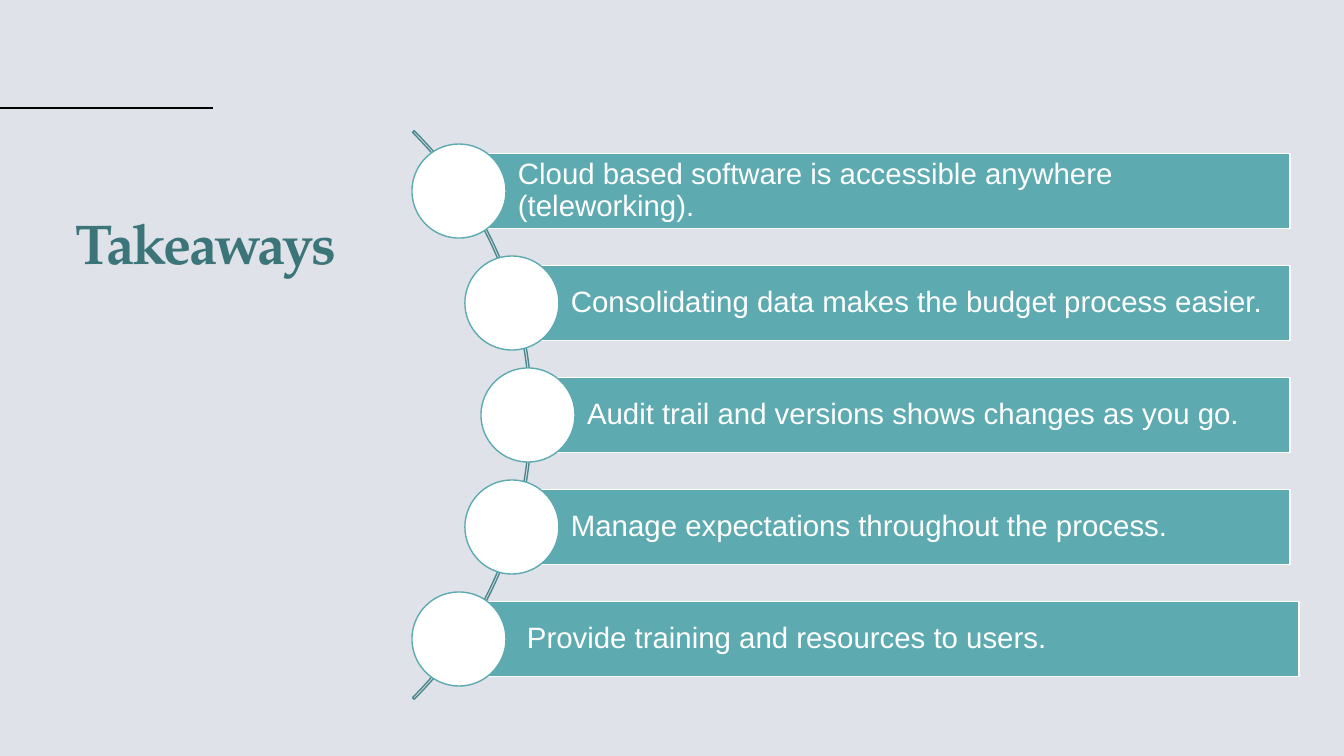
from dataclasses import dataclass
from math import sqrt

from pptx import Presentation
from pptx.dml.color import RGBColor
from pptx.enum.shapes import MSO_CONNECTOR, MSO_SHAPE
from pptx.enum.text import MSO_ANCHOR, PP_ALIGN
from pptx.oxml.ns import qn
from pptx.util import Pt
from lxml.etree import SubElement


@dataclass(frozen=True)
class Theme:
    background: str = "DFE3E9"
    bar: str = "5DAAB0"
    arc: str = "4A888D"
    title: str = "3B7579"
    white: str = "FFFFFF"
    black: str = "000000"
    title_font: str = "TeX Gyre Pagella"
    body_font: str = "Arial"
    title_size: int = 40
    body_size: int = 21


THEME = Theme()
EMU_PER_PX = 914400 / 100.8
TAKEAWAYS = [
    "Cloud based software is accessible anywhere (teleworking).",
    "Consolidating data makes the budget process easier.",
    "Audit trail and versions shows changes as you go.",
    "Manage expectations throughout the process.",
    "Provide training and resources to users.",
]
ARC_CENTER_X, ARC_CENTER_Y, ARC_RADIUS = 130, 415, 402
DISC_ORBIT, DISC_SIZE = 398, 94
BAR_HEIGHT, BAR_RIGHT, ROW_PITCH = 75, 1290, 112
LAST_BAR_SHIFT = 9


def px(length):
    return round(length * EMU_PER_PX)


def color(value):
    return RGBColor.from_string(value)


def add_outlined(page, kind, left, top, width, height, fill, line):
    shape = page.shapes.add_shape(kind, px(left), px(top), px(width), px(height))
    shape.shadow.inherit = False
    if fill:
        shape.fill.solid()
        shape.fill.fore_color.rgb = color(fill)
    else:
        shape.fill.background()
    shape.line.color.rgb = color(line)
    shape.line.width = Pt(1)
    return shape


def write(box, text, font, size, ink, anchor, align):
    frame = box.text_frame
    frame.word_wrap = True
    frame.vertical_anchor = anchor
    para = frame.paragraphs[0]
    para.text = text
    para.alignment = align
    para.line_spacing = 0.9
    para.font.name = font
    para.font.size = Pt(size)
    para.font.color.rgb = color(ink)
    return para


def add_rule(page):
    rule = page.shapes.add_connector(
        MSO_CONNECTOR.STRAIGHT, px(0), px(108), px(213), px(108))
    rule.line.color.rgb = color(THEME.black)
    rule.line.width = Pt(1.5)
    SubElement(rule.element.spPr, qn("a:effectLst"))


def add_title(page, text):
    box = page.shapes.add_textbox(px(-18), px(128), px(364), px(154))
    para = write(box, text, THEME.title_font, THEME.title_size, THEME.title,
                 MSO_ANCHOR.BOTTOM, PP_ALIGN.RIGHT)
    para.font.bold = True
    for span in para.runs:
        span.font.element.set("spc", "-150") if hasattr(span.font, "element") else \
            span.element_properties if hasattr(span, "element_properties") else None
    for properties in box.element.iter(qn("a:rPr"), qn("a:defRPr")):
        properties.set("spc", "-150")


def add_arc(page):
    arc = add_outlined(page, MSO_SHAPE.BLOCK_ARC, ARC_CENTER_X - ARC_RADIUS,
                       ARC_CENTER_Y - ARC_RADIUS, 2 * ARC_RADIUS, 2 * ARC_RADIUS,
                       None, THEME.arc)
    for index, value in enumerate((189, 27, 0.003)):
        arc.adjustments[index] = value


def add_takeaway(page, text, center_x, center_y, shift):
    bar = add_outlined(page, MSO_SHAPE.RECTANGLE, center_x + shift,
                       center_y - BAR_HEIGHT / 2, BAR_RIGHT - center_x, BAR_HEIGHT,
                       THEME.bar, THEME.white)
    frame = bar.text_frame
    frame.margin_left = px(59)
    frame.margin_top = frame.margin_right = frame.margin_bottom = px(6)
    write(bar, text, THEME.body_font, THEME.body_size, THEME.white,
          MSO_ANCHOR.MIDDLE, PP_ALIGN.LEFT)
    add_outlined(page, MSO_SHAPE.OVAL, center_x - DISC_SIZE / 2,
                 center_y - DISC_SIZE / 2, DISC_SIZE, DISC_SIZE,
                 THEME.white, THEME.bar)


def main():
    deck = Presentation()
    deck.slide_width, deck.slide_height = px(1344), px(756)
    page = deck.slides.add_slide(deck.slide_layouts[6])
    page.background.fill.solid()
    page.background.fill.fore_color.rgb = color(THEME.background)
    add_rule(page)
    add_arc(page)
    last = len(TAKEAWAYS) - 1
    for index, text in enumerate(TAKEAWAYS):
        offset = (index - last / 2) * ROW_PITCH
        center_x = ARC_CENTER_X + sqrt(DISC_ORBIT ** 2 - offset ** 2)
        shift = LAST_BAR_SHIFT if index == last else 0
        add_takeaway(page, text, center_x, ARC_CENTER_Y + offset, shift)
    add_title(page, "Takeaways")
    deck.save("out.pptx")


if __name__ == "__main__":
    main()
